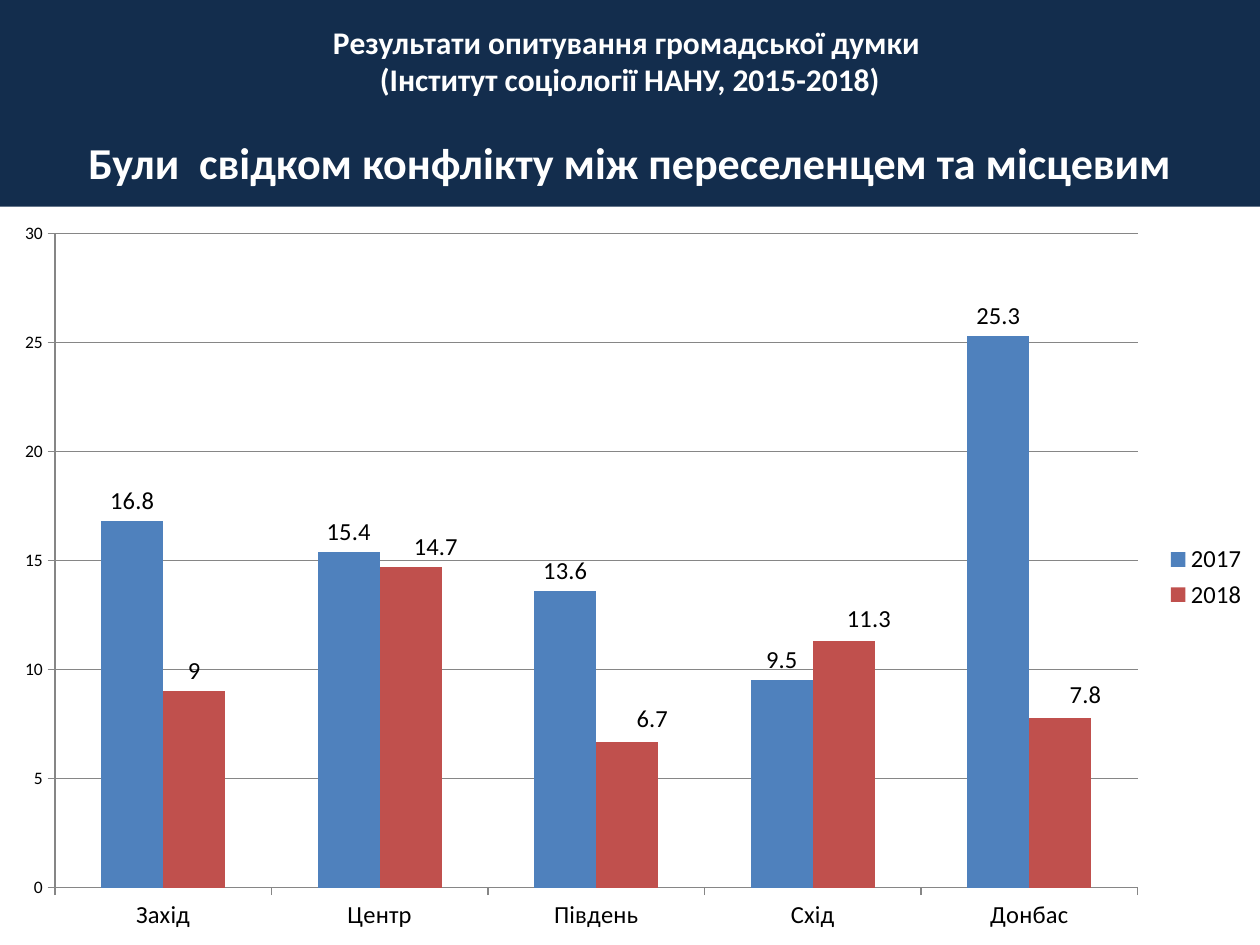
from lxml import etree
from pptx import Presentation
from pptx.chart.data import CategoryChartData
from pptx.dml.color import RGBColor
from pptx.enum.chart import XL_CHART_TYPE, XL_LABEL_POSITION, XL_LEGEND_POSITION, XL_TICK_MARK
from pptx.enum.text import MSO_ANCHOR, PP_ALIGN
from pptx.oxml.ns import qn
from pptx.util import Inches, Pt

COLUMNS = XL_CHART_TYPE.COLUMN_CLUSTERED
OUTSIDE_END = XL_LABEL_POSITION.OUTSIDE_END
RIGHT = XL_LEGEND_POSITION.RIGHT
TICK_OUT = XL_TICK_MARK.OUTSIDE
TOP = MSO_ANCHOR.TOP
CENTER = PP_ALIGN.CENTER

FONT = "Calibri"
NAVY, WHITE, BLACK, GRAY = "132D4D", "FFFFFF", "000000", "868686"
HEADING = [
    ("Pезультати опитування громадської думки \v(Інститут соціології НАНУ, 2015-2018)", 18, 0),
    ("Були  свідком конфлікту між переселенцем та місцевим", 25.2, 21),
]
REGIONS = ["Захід", "Центр", "Південь", "Схід", "Донбас"]
SERIES = [
    ("2017", "4F81BD", [16.8, 15.4, 13.6, 9.5, 25.3], {}),
    ("2018", "C0504D", [9, 14.7, 6.7, 11.3, 7.8],
     {1: (0.02, 0), 2: (0.02, -0.003), 3: (0.02, -0.003), 4: (0.02, -0.003)}),
]


def rgb(value):
    """Turn a hex string into a colour."""
    return RGBColor.from_string(value)


def set_attrs(obj, values):
    """Set each attribute from a dict of format values."""
    for name, value in values.items():
        setattr(obj, name, value)


def set_font(font, size, color=BLACK, bold=False):
    """Apply the slide font with a size, colour and weight."""
    set_attrs(font, {"name": FONT, "size": Pt(size), "bold": bold})
    font.color.rgb = rgb(color)


def format_title(slide):
    """Fill the title band with the two-part heading."""
    sp = slide.shapes.title
    set_attrs(sp, {"left": 0, "top": 0, "width": Inches(10), "height": Inches(1.64)})
    sp.fill.solid()
    sp.fill.fore_color.rgb = rgb(NAVY)
    tf = sp.text_frame
    set_attrs(tf, {"word_wrap": True, "vertical_anchor": TOP, "margin_top": Inches(0.18)})
    for i, (text, size, before) in enumerate(HEADING):
        p = tf.add_paragraph() if i else tf.paragraphs[0]
        p.text = text
        set_attrs(p, {"alignment": CENTER, "space_before": Pt(before), "line_spacing": 1.0})
        for r in p.runs:
            set_font(r.font, size, WHITE, True)


def shift_label(series, index, offset):
    """Move one data label by fractions of the chart size."""
    label = series.points[index].data_label
    set_font(label.font, 14)
    label.position = OUTSIDE_END
    dlbl = series._element.xpath(f"c:dLbls/c:dLbl[c:idx/@val='{index}']")[0]
    layout = etree.Element(qn("c:layout"))
    manual = etree.SubElement(layout, qn("c:manualLayout"))
    for axis, value in zip("xy", offset):
        etree.SubElement(manual, qn(f"c:{axis}")).set("val", str(value))
    dlbl.insert(1, layout)


def format_series(series, color, offsets):
    """Colour one series and place its value labels."""
    series.format.fill.solid()
    series.format.fill.fore_color.rgb = rgb(color)
    labels = series.data_labels
    set_attrs(labels, {"show_value": True, "position": OUTSIDE_END})
    set_font(labels.font, 14)
    for index, offset in offsets.items():
        shift_label(series, index, offset)


def format_axes(chart):
    """Set the scale, ticks, gridlines and text of both axes."""
    for axis, size in ((chart.category_axis, 14), (chart.value_axis, 10)):
        axis.major_tick_mark = TICK_OUT
        axis.format.line.color.rgb = rgb(GRAY)
        set_font(axis.tick_labels.font, size)
    axis = chart.value_axis
    set_attrs(axis, {"minimum_scale": 0, "maximum_scale": 30, "major_unit": 5,
                     "has_major_gridlines": True})
    axis.major_gridlines.format.line.color.rgb = rgb(GRAY)


def add_column_chart(slide):
    """Add the clustered columns by region and year."""
    data = CategoryChartData()
    data.categories = REGIONS
    for name, _, values, _ in SERIES:
        data.add_series(name, values)
    chart = slide.shapes.add_chart(
        COLUMNS, 0, Inches(1.66), Inches(10), Inches(5.84), data).chart
    set_font(chart.font, 10)
    set_attrs(chart, {"has_title": False, "has_legend": True})
    set_attrs(chart.legend, {"position": RIGHT, "include_in_layout": False})
    set_font(chart.legend.font, 14)
    plot = chart.plots[0]
    set_attrs(plot, {"gap_width": 150, "overlap": 0, "vary_by_categories": False})
    for series, (_, color, _, offsets) in zip(plot.series, SERIES):
        format_series(series, color, offsets)
    format_axes(chart)


def main():
    """Build and save the slide."""
    prs = Presentation()
    set_attrs(prs, {"slide_width": Inches(10), "slide_height": Inches(7.5)})
    slide = prs.slides.add_slide(prs.slide_layouts[5])
    format_title(slide)
    add_column_chart(slide)
    prs.save("out.pptx")


if __name__ == "__main__":
    main()
